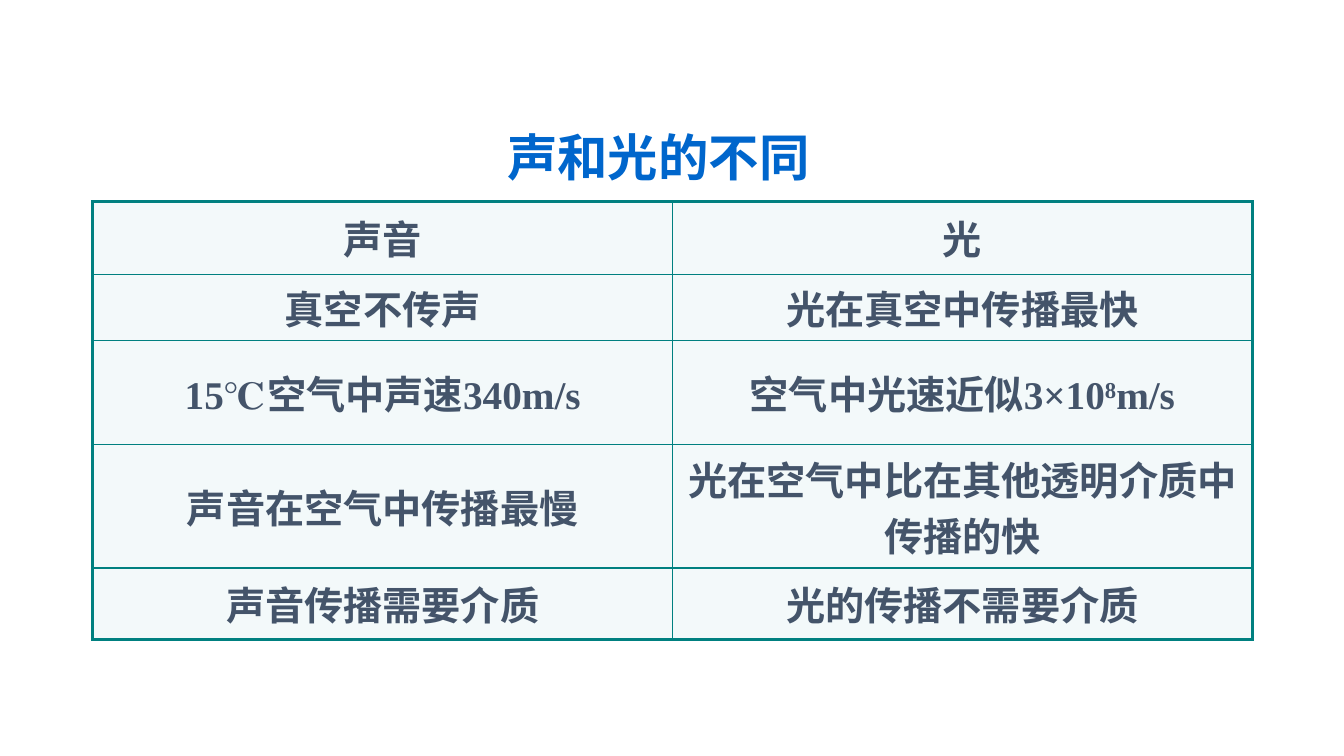
"""Build a slide with a table that compares sound and light."""
from dataclasses import dataclass

from lxml.etree import SubElement
from pptx import Presentation
from pptx.dml.color import RGBColor
from pptx.enum.text import MSO_ANCHOR, MSO_AUTO_SIZE, PP_ALIGN
from pptx.oxml.ns import qn
from pptx.slide import Slide
from pptx.table import _Cell
from pptx.text.text import _Paragraph
from pptx.util import Emu, Pt

EMU_PER_PX = 9144


@dataclass(frozen=True)
class Theme:
    title_color: str = "0066CC"
    text_color: str = "44546A"
    cell_fill: str = "F3F9FA"
    border_color: str = "008080"
    title_font: str = "Arial"
    table_font: str = "Times New Roman"
    title_size: float = 36
    table_size: float = 28
    para_gap: float = 5.6
    outer_line: float = 2.25
    inner_line: float = 1


@dataclass(frozen=True)
class Run:
    text: str
    superscript: bool = False


@dataclass(frozen=True)
class Row:
    height: int
    sound: tuple[Run, ...]
    light: tuple[Run, ...]


THEME = Theme()
TITLE = "声和光的不同"
COL_WIDTH = 575
ROWS = (
    Row(72, (Run("声音"),), (Run("光"),)),
    Row(62, (Run("真空不传声"),), (Run("光在真空中传播最快"),)),
    Row(103, (Run("15℃空气中声速340m/s"),),
        (Run("空气中光速近似3×10"), Run("8", True), Run("m/s"))),
    Row(103, (Run("声音在空气中传播最慢"),),
        (Run("光在空气中比在其他透明介质中传播的快"),)),
    Row(71, (Run("声音传播需要介质"),), (Run("光的传播不需要介质"),)),
)


def px(n: int) -> Emu:
    return Emu(n * EMU_PER_PX)


def add_run(p: _Paragraph, run: Run, font: str, size: float, color: str) -> None:
    r = p.add_run()
    r.text = run.text
    r.font.name = font
    r.font.size = Pt(size)
    r.font.bold = True
    r.font.color.rgb = RGBColor.from_string(color)
    if run.superscript:
        r._r.get_or_add_rPr().set("baseline", "30000")


def set_borders(cell: _Cell, widths: dict[str, float]) -> None:
    tc_pr = cell._tc.get_or_add_tcPr()
    for i, (side, width) in enumerate(widths.items()):
        ln = SubElement(tc_pr, qn(f"a:ln{side}"), w=str(Pt(width)))
        fill = SubElement(ln, qn("a:solidFill"))
        SubElement(fill, qn("a:srgbClr"), val=THEME.border_color)
        tc_pr.insert(i, ln)


def fill_cell(cell: _Cell, runs: tuple[Run, ...]) -> None:
    cell.fill.solid()
    cell.fill.fore_color.rgb = RGBColor.from_string(THEME.cell_fill)
    cell.vertical_anchor = MSO_ANCHOR.MIDDLE
    p = cell.text_frame.paragraphs[0]
    p.alignment = PP_ALIGN.CENTER
    p.space_before = Pt(THEME.para_gap)
    for run in runs:
        add_run(p, run, THEME.table_font, THEME.table_size, THEME.text_color)


def add_title(s: Slide) -> None:
    sp = s.shapes.title
    sp.left, sp.top, sp.width, sp.height = px(493), px(96), px(496), px(125)
    tf = sp.text_frame
    tf.word_wrap = True
    tf.auto_size = MSO_AUTO_SIZE.NONE
    tf.vertical_anchor = MSO_ANCHOR.MIDDLE
    p = tf.paragraphs[0]
    p.alignment = PP_ALIGN.LEFT
    p.line_spacing = 0.9
    add_run(p, Run(TITLE), THEME.title_font, THEME.title_size, THEME.title_color)


def add_comparison(s: Slide) -> None:
    height = sum(row.height for row in ROWS)
    table = s.shapes.add_table(
        len(ROWS), 2, px(92), px(200), px(2 * COL_WIDTH), px(height)).table
    table.first_row = table.horz_banding = False
    for col in table.columns:
        col.width = px(COL_WIDTH)
    for i, row in enumerate(ROWS):
        table.rows[i].height = px(row.height)
        for j, runs in enumerate((row.sound, row.light)):
            cell = table.cell(i, j)
            fill_cell(cell, runs)
            outer = {"L": j == 0, "R": j == 1,
                     "T": i == 0, "B": i == len(ROWS) - 1}
            set_borders(cell, {
                side: THEME.outer_line if edge else THEME.inner_line
                for side, edge in outer.items()})


def main() -> None:
    prs = Presentation()
    prs.slide_width, prs.slide_height = px(1333), px(750)
    s = prs.slides.add_slide(prs.slide_layouts[5])
    add_title(s)
    add_comparison(s)
    prs.save("out.pptx")


if __name__ == "__main__":
    main()
